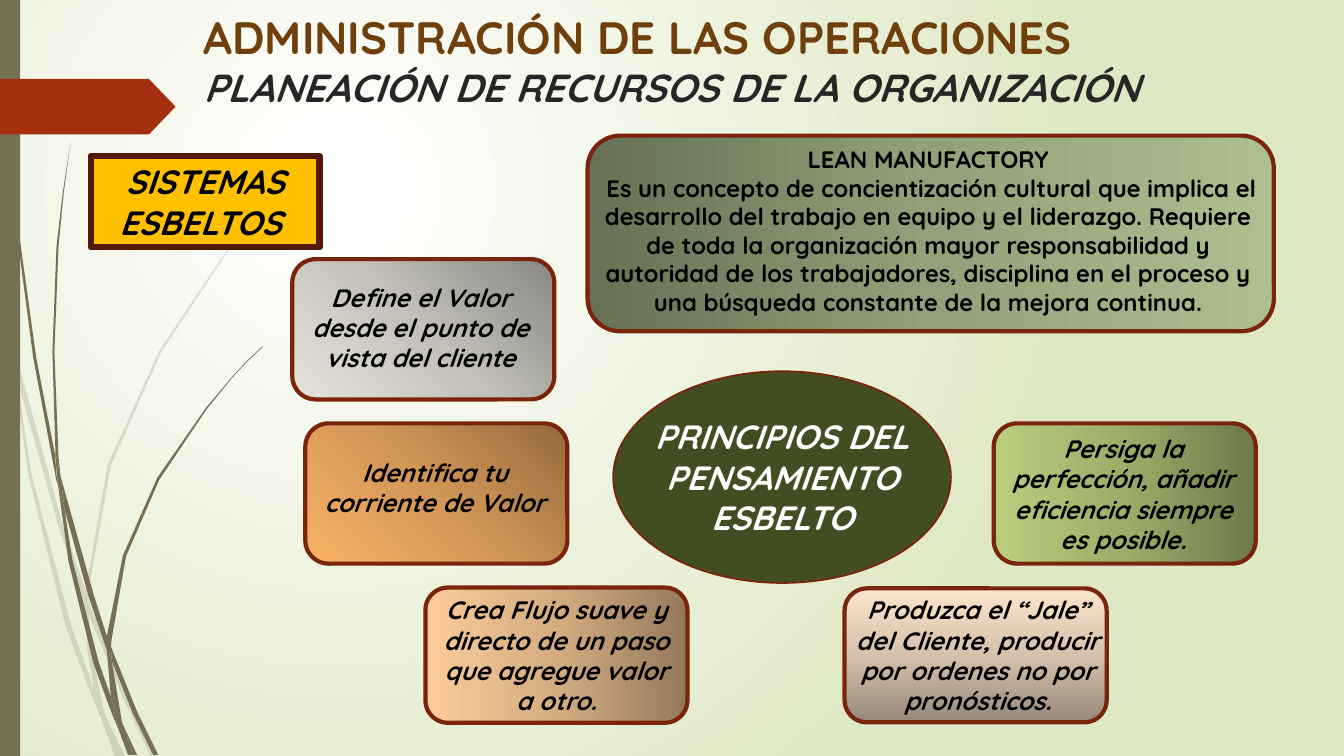
from lxml.etree import SubElement
from pptx import Presentation
from pptx.dml.color import RGBColor
from pptx.enum.shapes import MSO_SHAPE
from pptx.enum.text import MSO_ANCHOR, MSO_AUTO_SIZE, PP_ALIGN
from pptx.oxml.ns import qn
from pptx.util import Inches, Pt

WIDE, HIGH = Inches(13.33), Inches(7.5)
COLS, ROWS = 32, 18
FONT = "Quicksand"
OLIVE, RUST = "766F54", "7A240C"

MESH = (312, 750)
PALE = [
    [(11, 350), (9, 322), (0, 282), (0, 299), (10, 344)],
    [(58, 522), (84, 599), (85, 586), (62, 520), (14, 345), (17, 376)],
    [(92, 607), (88, 596), (88, 610), (123, 694), (150, 751), (155, 751), (127, 692)],
    [(119, 751), (124, 751), (105, 711)],
    [(93, 683), (70, 619), (31, 469), (17, 376), (11, 350), (28, 470), (65, 621),
     (92, 693), (101, 714), (99, 707)],
    [(84, 599), (87, 646), (93, 683), (96, 692), (105, 711), (103, 706), (91, 646),
     (88, 610), (88, 608)],
    [(88, 584), (110, 462), (160, 349), (229, 245), (268, 198), (290, 175),
     (312, 154), (312, 153), (289, 175), (268, 197), (228, 244), (158, 348),
     (107, 461), (85, 584), (85, 586), (88, 596)],
    [(101, 714), (114, 751), (119, 751)],
    [(88, 608), (88, 610), (88, 596), (85, 586), (84, 599)],
    [(96, 692), (93, 683), (99, 707), (101, 714), (119, 751), (105, 711)],
]
DARK = [
    [(7, 110), (17, 233), (33, 355), (56, 477), (57, 481), (55, 457), (55, 453),
     (36, 355), (19, 232), (8, 109), (5, 48), (4, 0), (3, 0), (4, 48)],
    [(88, 592), (106, 645), (106, 633), (106, 631), (93, 590), (60, 472), (64, 505)],
    [(113, 649), (110, 641), (111, 656), (132, 708), (152, 749), (157, 749), (136, 706)],
    [(110, 691), (98, 657), (72, 556), (64, 505), (57, 477), (68, 557), (93, 659),
     (111, 708), (117, 722), (116, 717)],
    [(60, 472), (58, 453), (54, 349), (58, 245), (63, 193), (70, 141), (62, 193),
     (56, 245), (52, 349), (55, 449)],
    [(133, 749), (136, 749), (122, 719)],
    [(57, 477), (64, 505), (60, 472), (55, 449), (55, 453)],
    [(111, 633), (125, 552), (158, 476), (205, 406), (231, 374), (245, 359),
     (261, 344), (260, 344), (245, 358), (231, 373), (204, 405), (156, 474),
     (122, 551), (106, 631), (110, 641)],
    [(117, 722), (127, 749), (131, 749)],
    [(106, 645), (110, 691), (116, 706), (122, 719), (121, 716), (111, 656), (109, 651)],
    [(106, 645), (109, 651), (111, 656), (110, 641), (106, 631), (106, 633)],
    [(116, 706), (110, 691), (116, 717), (117, 722), (130, 749), (133, 749), (122, 719)],
]
CORNER = (100, 0, 0, 100)
STEPS = [
    ((10.13, 13.99, 6.24, 3.22), (0, 0.05, 6.24, 3.14),
     "Crea Flujo suave y directo de un paso que agregue valor a otro.",
     ("95795B", "D4AC81", "FBCC99"), {"angle": 180}),
    ((7.27, 10.08, 6.24, 3.34), (-0.07, 0.69, 6.31, 1.7),
     "Identifica tu corriente de Valor",
     ("94693D", "D29656", "F9B266"), {"focus": CORNER}),
    ((20.11, 14.01, 6.24, 3.19), (-0.14, 0.03, 6.62, 3.14),
     "Produzca el “Jale” del Cliente, producir por ordenes no por pronósticos.",
     ("968879", "D5C1AC", "FDE5CC"), {"angle": 270}),
    ((6.96, 6.17, 6.24, 3.34), (-0.1, 0.43, 6.31, 2.42),
     "Define el Valor desde el punto de vista del cliente",
     ("888781", "C2C0B8", "E6E4DA"), {"focus": CORNER}),
    ((23.66, 10.08, 6.24, 3.34), (0.12, 0.12, 5.93, 3.14),
     "Persiga la perfección, añadir eficiencia siempre es posible.",
     ("6D7A4A", "9CAD69", "B9CE7D"), {"angle": 180}),
]


def hue(code):
    """Turn a hex string into a colour."""
    return RGBColor.from_string(code)


def place(box):
    """Turn a box in grid cells into slide lengths."""
    x, y, w, h = box
    return [round(n) for n in (x * WIDE / COLS, y * HIGH / ROWS,
                               w * WIDE / COLS, h * HIGH / ROWS)]


def shift(box, area):
    """Move an area so that it starts from the corner of a box."""
    return (box[0] + area[0], box[1] + area[1], area[2], area[3])


def blend(owner, root, tones, angle=0, focus=None):
    """Fill with evenly spaced tones, along an angle or round a focus."""
    owner.fill.gradient()
    grad = root.find(".//" + qn("a:gradFill"))
    for child in list(grad):
        grad.remove(child)
    stops = SubElement(grad, qn("a:gsLst"))
    for i, tone in enumerate(tones):
        stop = SubElement(stops, qn("a:gs"), pos=str(100000 * i // (len(tones) - 1)))
        SubElement(stop, qn("a:srgbClr"), val=tone)
    if focus:
        way = SubElement(grad, qn("a:path"), path="circle")
        sides = {k: str(v * 1000) for k, v in zip("ltrb", focus)}
        SubElement(way, qn("a:fillToRect"), **sides)
    else:
        SubElement(grad, qn("a:lin"), ang=str(angle * 60000), scaled="0")


def style(shape, fill=None, line=None, width=3):
    """Give a shape its plain fill and line, without a shadow."""
    shape.shadow.inherit = False
    if fill:
        shape.fill.solid()
        shape.fill.fore_color.rgb = hue(fill)
    if line:
        shape.line.color.rgb = hue(line)
        shape.line.width = Pt(width)
    else:
        shape.line.fill.background()
    return shape


def form(slide, kind, box, **look):
    """Add a styled preset shape."""
    return style(slide.shapes.add_shape(kind, *place(box)), **look)


def put(para, text, size=18, color="000000", bold=True, slant=True,
        align=PP_ALIGN.CENTER):
    """Write formatted text into a paragraph."""
    para.alignment = align
    run = para.add_run()
    run.text = text
    run.font.name, run.font.size = FONT, Pt(size)
    run.font.bold, run.font.italic = bold, slant
    run.font.color.rgb = hue(color)


def label(slide, box, lines, grow=True, **look):
    """Add a text box; each line is its text and its own format."""
    frame = slide.shapes.add_textbox(*place(box)).text_frame
    frame.word_wrap = True
    frame.auto_size = MSO_AUTO_SIZE.SHAPE_TO_FIT_TEXT if grow else MSO_AUTO_SIZE.NONE
    for i, (text, own) in enumerate(lines):
        para = frame.add_paragraph() if i else frame.paragraphs[0]
        put(para, text, **look, **own)


def grass(slide, box, blades, alpha):
    """Draw blades whose points lie on a fine mesh over the box."""
    x, y, w, h = place(box)
    for blade in blades:
        edge = [(round(x + a * w / MESH[0]), round(y + b * h / MESH[1]))
                for a, b in blade]
        pen = slide.shapes.build_freeform(*edge[0])
        pen.add_line_segments(edge[1:], close=True)
        shape = style(pen.convert_to_shape(), fill=OLIVE)
        if alpha < 100:
            tone = shape.element.spPr.find(".//" + qn("a:srgbClr"))
            SubElement(tone, qn("a:alpha"), val=str(alpha * 1000))


def decor(slide):
    """Paint the background, grass, side bar and arrow."""
    blend(slide.background, slide.element, ("FFFFFF", "DFE8C4"),
          focus=(50, 50, 100, 100))
    for blades, alpha in ((PALE, 20), (DARK, 100)):
        grass(slide, (0, 0, 7.49, ROWS), blades, alpha)
    form(slide, MSO_SHAPE.RECTANGLE, (0, 0, 0.48, ROWS), fill=OLIVE)
    arrow = form(slide, MSO_SHAPE.PENTAGON, (0, 1.88, 4.18, 1.32), fill="A53010")
    arrow.adjustments[0] = 0.48


def head(slide, box):
    """Write the two title lines."""
    label(slide, box, [
        ("ADMINISTRACIÓN DE LAS OPERACIONES",
         {"size": 32.4, "color": "6F3F0C", "slant": False}),
        ("PLANEACIÓN DE RECURSOS DE LA ORGANIZACIÓN",
         {"size": 27.9, "color": "262626"}),
    ], grow=False, align=PP_ALIGN.LEFT)


def tag(slide, box):
    """Add the yellow topic tag."""
    shape = form(slide, MSO_SHAPE.RECTANGLE, box, fill="FFC000", line="521808", width=4.5)
    frame = shape.text_frame
    frame.word_wrap = True
    frame.vertical_anchor = MSO_ANCHOR.MIDDLE
    put(frame.paragraphs[0], "SISTEMAS ESBELTOS ", size=24)


def card(slide, box, area, lines, tones, way, **look):
    """Add a rounded card with a gradient and its text."""
    shape = form(slide, MSO_SHAPE.ROUNDED_RECTANGLE, box, line=RUST)
    blend(shape, shape.element.spPr, tones, **way)
    label(slide, shift(box, area), lines, **look)


def hub(slide, box):
    """Add the central ellipse."""
    form(slide, MSO_SHAPE.OVAL, box, fill="424D22", line=RUST, width=1.25)
    label(slide, shift(box, (0, 0.95, box[2], 3.14)),
          [("PRINCIPIOS DEL PENSAMIENTO ESBELTO", {})], size=24, color="FFFFFF")


def main():
    """Build and save the slide."""
    deck = Presentation()
    deck.slide_width, deck.slide_height = WIDE, HIGH
    slide = deck.slides.add_slide(deck.slide_layouts[6])
    decor(slide)
    head(slide, (4.61, 0.1, 23.4, 3.36))
    tag(slide, (2.16, 3.71, 5.45, 2.18))
    card(slide, (13.99, 3.23, 16.34, 4.66), (0, 0.1, 16.22, 4.37), [
        ("LEAN MANUFACTORY", {}),
        (" Es un concepto de concientización cultural que implica el desarrollo del "
         "trabajo en equipo y el liderazgo. Requiere de toda la organización mayor "
         "responsabilidad y autoridad de los trabajadores, disciplina en el proceso "
         "y una búsqueda constante de la mejora continua.", {}),
    ], ("667155", "91A179", "ACBF8F"), {"angle": 0}, size=17, slant=False)
    hub(slide, (14.6, 8.84, 8.04, 5.04))
    for box, area, text, tones, way in STEPS:
        card(slide, box, area, [(text, {})], tones, way)
    deck.save("out.pptx")


if __name__ == "__main__":
    main()
